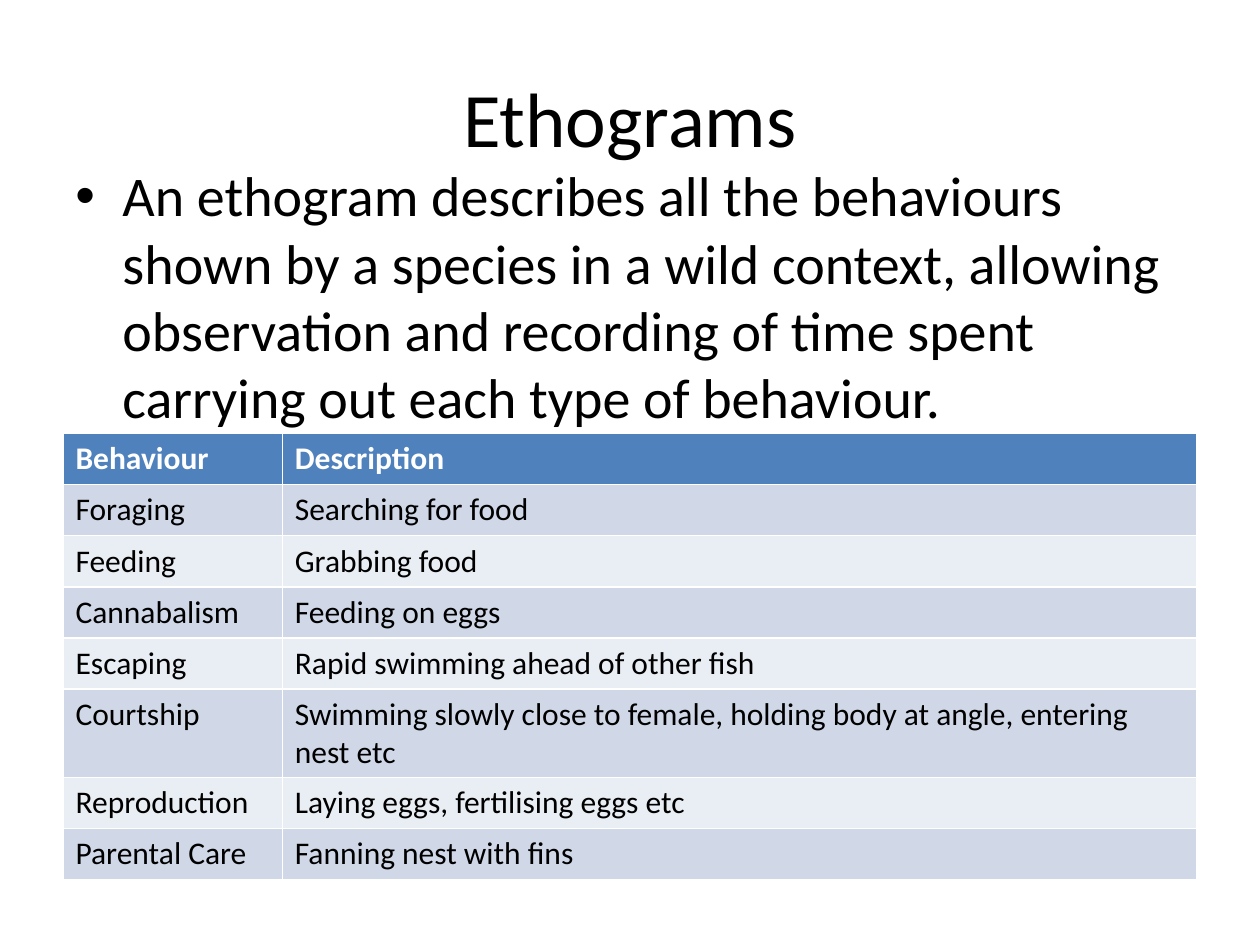
from dataclasses import dataclass

from lxml import etree
from pptx import Presentation
from pptx.dml.color import RGBColor
from pptx.enum import text
from pptx.oxml.ns import qn
from pptx.util import Cm, Pt

TITLE = "Ethograms"
DEFINITION = (
    "An ethogram describes all the behaviours shown by a species in a wild "
    "context, allowing observation and recording of time spent carrying out "
    "each type of behaviour."
)
HEADER = ("Behaviour", "Description")
BEHAVIOURS = [
    ("Foraging", "Searching for food"),
    ("Feeding", "Grabbing food"),
    ("Cannabalism", "Feeding on eggs"),
    ("Escaping", "Rapid swimming ahead of other fish"),
    ("Courtship", "Swimming slowly close to female, holding body at angle, "
                  "entering nest etc"),
    ("Reproduction", "Laying eggs, fertilising eggs etc"),
    ("Parental Care", "Fanning nest with fins"),
]


@dataclass(frozen=True)
class Theme:
    font: str = "Calibri"
    ink: str = "000000"
    header_ink: str = "FFFFFF"
    header_fill: str = "4F81BD"
    bands: tuple = ("D0D8E8", "E9EDF4")
    title_size: int = 44
    body_size: int = 32
    table_size: int = 18


THEME = Theme()
LEFT, WIDTH = Cm(1.27), Cm(22.86)
COLUMNS = (Cm(4.42), Cm(18.44))
ROW_HEIGHT = Cm(1.03)


def add_run(p, content, size, colour=THEME.ink, bold=False):
    r = p.add_run()
    r.text = content
    r.font.name = THEME.font
    r.font.size = Pt(size)
    r.font.bold = bold
    r.font.color.rgb = RGBColor.from_string(colour)


def add_bullet(p, indent):
    """Give the paragraph a round bullet with a hanging indent."""
    pPr = p._p.get_or_add_pPr()
    pPr.set("marL", str(indent))
    pPr.set("indent", str(-indent))
    before = etree.SubElement(pPr, qn("a:spcBef"))
    etree.SubElement(before, qn("a:spcPct")).set("val", "20000")
    etree.SubElement(pPr, qn("a:buFont")).set("typeface", "Arial")
    etree.SubElement(pPr, qn("a:buChar")).set("char", "•")


def add_title(slide):
    sp = slide.shapes.title
    sp.left, sp.top, sp.width, sp.height = LEFT, Cm(0.76), WIDTH, Cm(3.18)
    tf = sp.text_frame
    tf.vertical_anchor = text.MSO_ANCHOR.MIDDLE
    p = tf.paragraphs[0]
    p.alignment = text.PP_ALIGN.CENTER
    add_run(p, TITLE, THEME.title_size)


def add_definition(slide):
    sp = slide.shapes.add_textbox(LEFT, Cm(3.12), WIDTH, Cm(5.59))
    tf = sp.text_frame
    tf.word_wrap = True
    p = tf.paragraphs[0]
    add_bullet(p, Cm(0.95))
    add_run(p, DEFINITION, THEME.body_size)


def add_behaviour_table(slide):
    rows = [HEADER, *BEHAVIOURS]
    frame = slide.shapes.add_table(len(rows), len(COLUMNS), LEFT, Cm(8.74),
                                   WIDTH, ROW_HEIGHT * len(rows))
    table = frame.table
    for column, width in zip(table.columns, COLUMNS):
        column.width = width
    for i, row in enumerate(rows):
        is_header = i == 0
        fill = THEME.header_fill if is_header else THEME.bands[(i - 1) % 2]
        ink = THEME.header_ink if is_header else THEME.ink
        for j, content in enumerate(row):
            cell = table.cell(i, j)
            cell.fill.solid()
            cell.fill.fore_color.rgb = RGBColor.from_string(fill)
            add_run(cell.text_frame.paragraphs[0], content,
                    THEME.table_size, ink, is_header)


def main():
    prs = Presentation()
    prs.slide_width, prs.slide_height = Cm(25.4), Cm(19.05)
    slide = prs.slides.add_slide(prs.slide_layouts.get_by_name("Title Only"))
    add_title(slide)
    add_definition(slide)
    add_behaviour_table(slide)
    prs.save("out.pptx")


if __name__ == "__main__":
    main()
